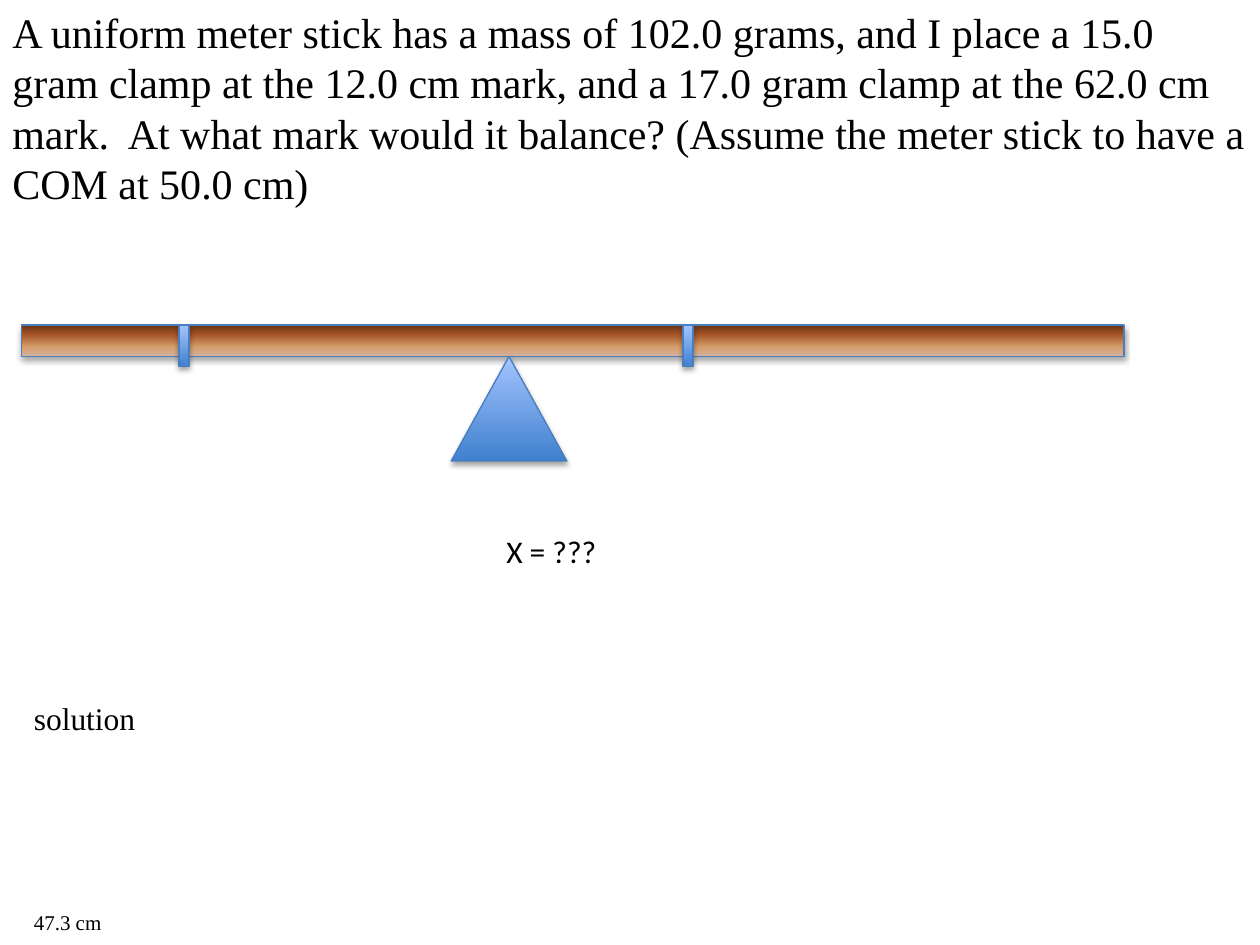
from lxml import etree
from pptx import Presentation
from pptx.dml.color import RGBColor
from pptx.enum.shapes import MSO_SHAPE
from pptx.enum.text import MSO_AUTO_SIZE
from pptx.oxml.ns import qn
from pptx.util import Inches, Pt

RECT = MSO_SHAPE.RECTANGLE
TRIANGLE = MSO_SHAPE.ISOSCELES_TRIANGLE
GROW = MSO_AUTO_SIZE.SHAPE_TO_FIT_TEXT

COLORS = {"text": "000000", "line": "4B7EBC", "shadow": "000000"}
# Gradient stops from bottom to top: position in percent, colour
WOOD = [(0, "D6B19C"), (30, "D49E6C"), (70, "A65528"), (100, "663012")]
METAL = [(0, "3F80CE"), (100, "A4C4FF")]
SERIF, SANS = "Times New Roman", "Calibri"


def add_solid(kind, box, stops):
    """Add a shape with a vertical gradient, thin outline and soft shadow."""
    sp = s.shapes.add_shape(kind, *map(Inches, box))
    sp.fill.gradient()
    sp.fill.gradient_angle = 90
    gs_list = next(sp._element.spPr.iter(qn("a:gsLst")))
    for gs in list(gs_list):
        gs_list.remove(gs)
    for pos, color in stops:
        gs = etree.SubElement(gs_list, qn("a:gs"), pos=str(pos * 1000))
        etree.SubElement(gs, qn("a:srgbClr"), val=color)
    sp.line.color.rgb = RGBColor.from_string(COLORS["line"])
    sp.line.width = Pt(0.75)
    sp.shadow.inherit = False
    effects = sp._element.spPr.find(qn("a:effectLst"))
    shadow = etree.SubElement(effects, qn("a:outerShdw"), blurRad=str(Pt(3.1)),
                              dist=str(Pt(1.8)), dir="5400000", rotWithShape="0")
    color = etree.SubElement(shadow, qn("a:srgbClr"), val=COLORS["shadow"])
    etree.SubElement(color, qn("a:alpha"), val="35000")


def add_text(text, box, wrap, font):
    """Add a one-paragraph text box that grows with its text."""
    tf = s.shapes.add_textbox(*map(Inches, box)).text_frame
    tf.word_wrap = wrap
    tf.auto_size = GROW
    r = tf.paragraphs[0].add_run()
    r.text = text
    r.font.color.rgb = RGBColor.from_string(COLORS["text"])
    for name, value in font.items():
        setattr(r.font, name, value)


prs = Presentation()
prs.slide_width, prs.slide_height = Inches(10), Inches(7.5)
s = prs.slides.add_slide(prs.slide_layouts[6])

# Meter stick, the two clamps on it and the pivot below
stick_top, stick_height = 2.58, 0.25
add_solid(RECT, (0.17, stick_top, 8.75, stick_height), WOOD)
for left in (1.42, 5.42):
    add_solid(RECT, (left, stick_top, 0.08, 0.33), METAL)
add_solid(TRIANGLE, (3.58, stick_top + stick_height, 0.92, 0.83), METAL)

# Question, unknown, solution and answer
question = (
    "A uniform meter stick has a mass of 102.0 grams, and I place a 15.0 gram "
    "clamp at the 12.0 cm mark, and a 17.0 gram clamp at the 62.0 cm mark.  "
    "At what mark would it balance? (Assume the meter stick to have a COM at 50.0 cm)"
)
for text, box, wrap, font in [
    (question, (0, 0, 10, 1.72), True, {"name": SERIF, "size": Pt(24)}),
    ("X = ???", (3.92, 4.17, 0.93, 0.4), False, {"name": SANS, "size": Pt(18)}),
    ("solution", (0.17, 5.5, 9.5, 0.4), True, {"name": SERIF, "size": Pt(18)}),
    ("47.3 cm", (0.17, 7.17, 0.75, 0.3), False, {"name": SERIF, "size": Pt(12)}),
]:
    add_text(text, box, wrap, font)

prs.save("out.pptx")
